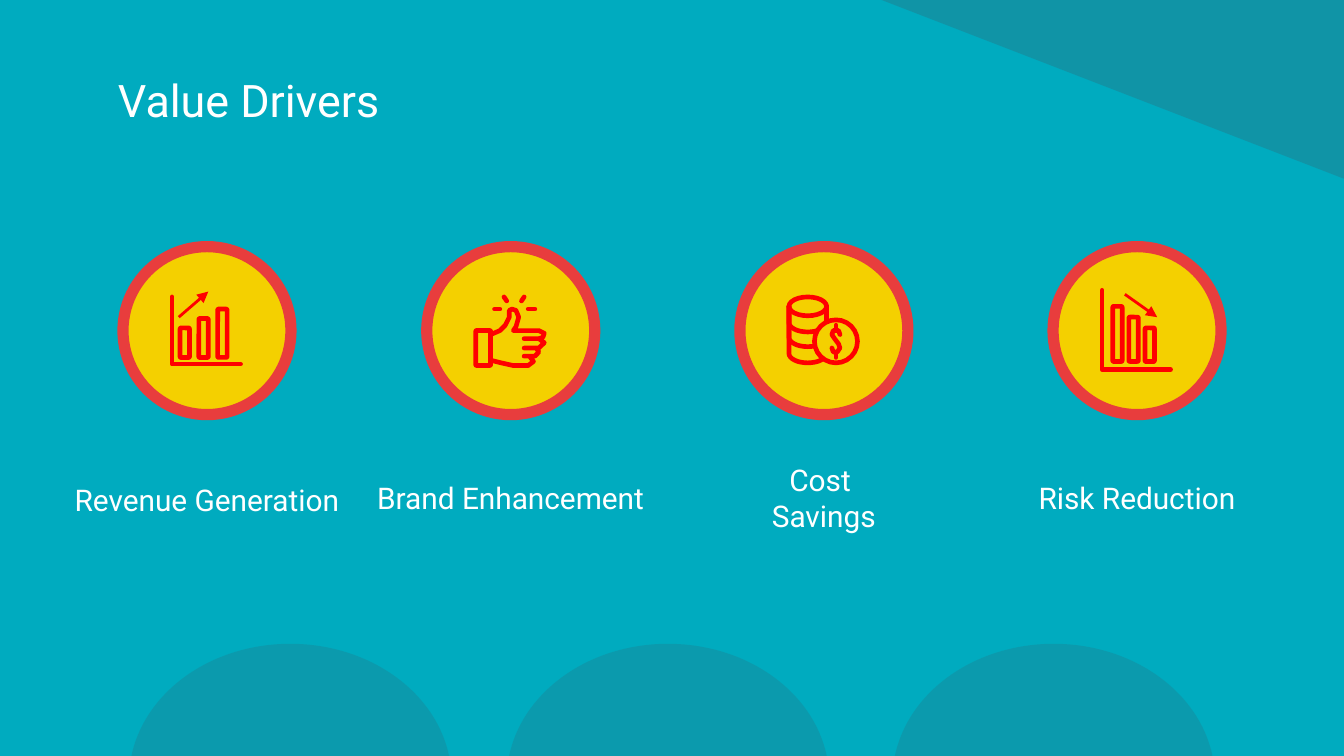
from math import cos, pi, sin

from lxml import etree
from pptx import Presentation
from pptx.dml.color import RGBColor
from pptx.enum.shapes import MSO_CONNECTOR, MSO_SHAPE
from pptx.enum.text import MSO_ANCHOR, PP_ALIGN
from pptx.oxml.ns import qn
from pptx.util import Inches, Pt

OVAL = MSO_SHAPE.OVAL
ROUNDED = MSO_SHAPE.ROUNDED_RECTANGLE
TRIANGLE = MSO_SHAPE.RIGHT_TRIANGLE
STRAIGHT = MSO_CONNECTOR.STRAIGHT
MIDDLE = MSO_ANCHOR.MIDDLE
LEFT, CENTER = PP_ALIGN.LEFT, PP_ALIGN.CENTER

TEAL = RGBColor(0x00, 0xAB, 0xBF)
SHADE = RGBColor(0x33, 0x65, 0x74)
YELLOW = RGBColor(0xF4, 0xD0, 0x00)
CORAL = RGBColor(0xE8, 0x3D, 0x3D)
RED = RGBColor(0xFF, 0x00, 0x00)
WHITE = RGBColor(0xFF, 0xFF, 0xFF)

FONT = "Roboto"
SLIDE_W = 10
SLIDE_H = SLIDE_W * 9 / 16
DISC_Y, DISC_SIZE = 2.46, 1.25
LABEL_Y, LABEL_W, LABEL_H = 3.7, 2.3, 0.74
UNIT = 0.01         # icon grid step, counted from the disc centre
ICON_LINE = 2.5

THUMB = [(-15, 3), (-8, 0), (-4, -4), (-1, -10), (-1, -15), (1, -16),
         (4, -15), (6, -10), (4, -3), (2, 0), (21, 0), (25, 2), (24, 5),
         (21, 6), (10, 6), (21, 6), (25, 9), (21, 13), (10, 13), (19, 13),
         (21, 16), (18, 19), (10, 19), (14, 19), (17, 23), (13, 26),
         (2, 26), (-7, 24), (-15, 22)]
SPARKS = [[(-5, -25), (-3, -22)], [(10, -25), (8, -22)],
          [(-12, -16), (-8, -16)], [(13, -16), (18, -16)]]
DOLLAR = [[(12, 3), (11, 0), (7, 0), (6, 3), (8, 6), (11, 10), (12, 13),
           (10, 16), (7, 16), (6, 13)],
          [(9, -4), (9, -1)], [(9, 17), (9, 20)]]


def add_shape(slide, kind, x, y, w, h, fill=None, alpha=None, line=None, width=0):
    sp = slide.shapes.add_shape(kind, Inches(x), Inches(y), Inches(w), Inches(h))
    sp.shadow.inherit = False
    if fill is None:
        sp.fill.background()
    else:
        sp.fill.solid()
        sp.fill.fore_color.rgb = fill
    if alpha is not None:
        color = sp.fill._xPr.find(".//" + qn("a:srgbClr"))
        etree.SubElement(color, qn("a:alpha")).set("val", str(alpha * 1000))
    if line is None:
        sp.line.fill.background()
    else:
        sp.line.color.rgb = line
        sp.line.width = Pt(width)
    return sp


def add_text(slide, lines, x, y, w, h, size, align, spacing=None):
    box = slide.shapes.add_textbox(Inches(x), Inches(y), Inches(w), Inches(h))
    tf = box.text_frame
    tf.word_wrap = True
    tf.vertical_anchor = MIDDLE
    tf.margin_left = tf.margin_right = Inches(0.1)
    tf.margin_top = tf.margin_bottom = Inches(0.1)
    tf.text = "\n".join(lines)
    for p in tf.paragraphs:
        p.alignment = align
        p.line_spacing = spacing
        for r in p.runs:
            r.font.name = FONT
            r.font.size = Pt(size)
            r.font.color.rgb = WHITE


def on_grid(cx, point):
    """Slide position of a point on the icon grid of the disc at cx."""
    return Inches(cx + point[0] * UNIT), Inches(DISC_Y + point[1] * UNIT)


def stroke(slide, cx, points):
    """Open red line with round ends and joins."""
    start, *rest = [on_grid(cx, point) for point in points]
    builder = slide.shapes.build_freeform(*start)
    builder.add_line_segments(rest, close=False)
    sp = builder.convert_to_shape()
    sp.shadow.inherit = False
    sp.fill.background()
    sp.line.color.rgb = RED
    sp.line.width = Pt(ICON_LINE)
    ln = sp.line._get_or_add_ln()
    ln.set("cap", "rnd")
    etree.SubElement(ln, qn("a:round"))


def outline(slide, kind, cx, col, row, cols, rows, fill=None):
    """Red outlined preset shape placed on the icon grid."""
    return add_shape(slide, kind, cx + col * UNIT, DISC_Y + row * UNIT,
                     cols * UNIT, rows * UNIT, fill, line=RED, width=ICON_LINE)


def arrow(slide, cx, start, end):
    line = slide.shapes.add_connector(STRAIGHT, *on_grid(cx, start), *on_grid(cx, end))
    line.line.color.rgb = RED
    line.line.width = Pt(1.5)
    ln = line.line._get_or_add_ln()
    etree.SubElement(ln, qn("a:tailEnd")).set("type", "triangle")
    etree.SubElement(line._element.spPr, qn("a:effectLst"))


def bar_icon(slide, cx, bars, base, axis_top, axis_base, trend):
    for col, top in bars:
        outline(slide, ROUNDED, cx, col, top, 7, base - top).adjustments[0] = 0.1
    stroke(slide, cx, [(-26, axis_top), (-26, axis_base), (25, axis_base)])
    arrow(slide, cx, *trend)


def growth_icon(slide, cx):
    bar_icon(slide, cx, [(-20, -2), (-6, -9), (8, -16)], 20, -25, 25,
             [(-21, -10), (1, -29)])


def decline_icon(slide, cx):
    bar_icon(slide, cx, [(-18, -18), (-6, -10), (6, -2)], 23, -30, 29,
             [(-9, -27), (15, -10)])


def thumb_icon(slide, cx):
    outline(slide, ROUNDED, cx, -26, 0, 11, 26).adjustments[0] = 0.05
    for points in [THUMB, *SPARKS]:
        stroke(slide, cx, points)


def coins_icon(slide, cx):
    # Stack: top face, then one curved edge per coin
    outline(slide, OVAL, cx, -26, -25, 28, 14)
    steps = [pi * i / 16 for i in range(17)]
    for row in (-6, 5, 17):
        edge = [(-12 - 14 * cos(a), row + 7 * sin(a)) for a in steps]
        stroke(slide, cx, [(-26, -18), *edge, (2, -18)])
    # Front coin
    outline(slide, OVAL, cx, -7, -8, 32, 32, YELLOW)
    for points in DOLLAR:
        stroke(slide, cx, points)


DRIVERS = [
    (1.54, ["Revenue Generation"], growth_icon, 1.15),
    (3.8, ["Brand Enhancement"], thumb_icon, None),
    (6.13, ["Cost ", "Savings"], coins_icon, None),
    (8.46, ["Risk Reduction"], decline_icon, None),
]


def add_background(slide):
    slide.background.fill.solid()
    slide.background.fill.fore_color.rgb = TEAL
    for x in (0.96, 3.77, 6.64):
        add_shape(slide, OVAL, x, 4.79, 2.4, 2.02, SHADE, alpha=23)
    corner = add_shape(slide, TRIANGLE, SLIDE_W - 3.44, 0, 3.44, 1.33, SHADE, alpha=32)
    corner.rotation = 180


def add_driver(slide, cx, lines, draw_icon, spacing):
    add_shape(slide, OVAL, cx - DISC_SIZE / 2, DISC_Y - DISC_SIZE / 2,
              DISC_SIZE, DISC_SIZE, YELLOW, line=CORAL, width=6)
    draw_icon(slide, cx)
    add_text(slide, lines, cx - LABEL_W / 2, LABEL_Y - LABEL_H / 2,
             LABEL_W, LABEL_H, 16, CENTER, spacing)


def main():
    prs = Presentation()
    prs.slide_width, prs.slide_height = Inches(SLIDE_W), Inches(SLIDE_H)
    slide = prs.slides.add_slide(prs.slide_layouts[6])
    add_background(slide)
    add_text(slide, ["Value Drivers"], 0.78, 0.43, 8.44, 0.63, 24, LEFT)
    for driver in DRIVERS:
        add_driver(slide, *driver)
    prs.save("out.pptx")


if __name__ == "__main__":
    main()
